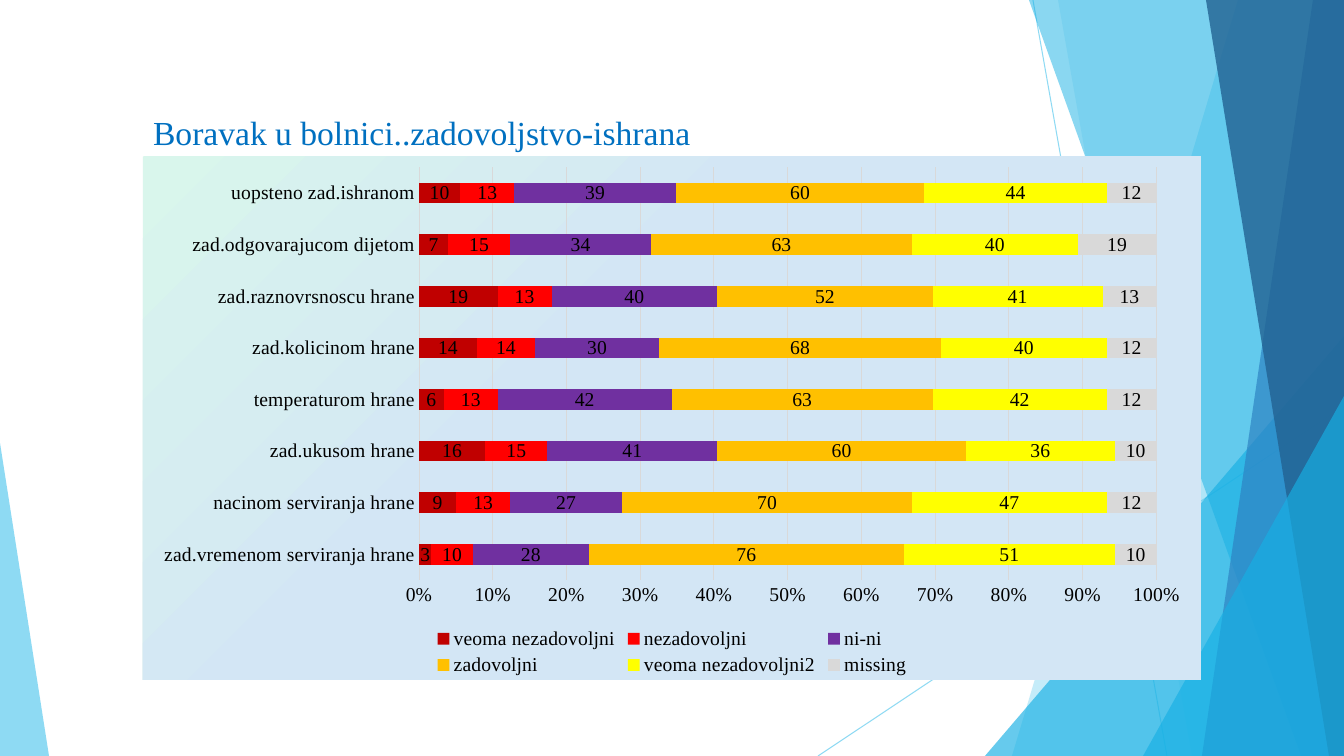
from lxml.etree import SubElement
from pptx import Presentation
from pptx.chart.data import CategoryChartData
from pptx.dml.color import RGBColor
from pptx.enum.chart import XL_CHART_TYPE, XL_LEGEND_POSITION, XL_TICK_MARK
from pptx.enum.shapes import MSO_CONNECTOR, MSO_SHAPE
from pptx.enum.text import MSO_ANCHOR, MSO_AUTO_SIZE, PP_ALIGN
from pptx.oxml import parse_xml
from pptx.oxml.ns import nsdecls, qn
from pptx.util import Pt

SCALE = 914400 / 100.8
WIDTH, HEIGHT = 1344, 756
FONT = "Times New Roman"

CATEGORIES = [
    "zad.vremenom serviranja hrane", "nacinom serviranja hrane",
    "zad.ukusom hrane", "temperaturom hrane", "zad.kolicinom hrane",
    "zad.raznovrsnoscu hrane", "zad.odgovarajucom dijetom",
    "uopsteno zad.ishranom",
]
ANSWERS = [
    ("veoma nezadovoljni", "C00000", (3, 9, 16, 6, 14, 19, 7, 10)),
    ("nezadovoljni", "FF0000", (10, 13, 15, 13, 14, 13, 15, 13)),
    ("ni-ni", "7030A0", (28, 27, 41, 42, 30, 40, 34, 39)),
    ("zadovoljni", "FFC000", (76, 70, 60, 63, 68, 52, 63, 60)),
    ("veoma nezadovoljni2", "FFFF00", (51, 47, 36, 42, 40, 41, 40, 44)),
    ("missing", "D9D9D9", (10, 12, 10, 12, 12, 13, 19, 12)),
]
BACKGROUND_STOPS = [(59, "D3E6F5"), (100, "D9F6EC"), (100, "B7E8F8"), (100, "CFEFFA")]


def px(length):
    return round(length * SCALE)


def color(value):
    return RGBColor.from_string(value)


def set_format(target, values):
    for name, value in values.items():
        setattr(target, name, value)


def set_font(font, size, value):
    set_format(font, {"name": FONT, "size": Pt(size), "bold": False})
    font.color.rgb = color(value)


def paint(fill, value, opacity=100):
    fill.solid()
    fill.fore_color.rgb = color(value)
    if opacity < 100:
        holder = fill._xPr.find(qn("a:solidFill"))[0]
        SubElement(holder, qn("a:alpha"), val=str(opacity * 1000))


def add_ray(page, start, end):
    ray = page.shapes.add_connector(
        MSO_CONNECTOR.STRAIGHT, *(px(value) for value in start + end))
    ray.line.width = Pt(0.75)
    paint(ray.line.fill, "5FCBEF", 70)
    SubElement(ray._element.spPr, qn("a:effectLst"))


def finish_facet(facet, value, opacity):
    facet.shadow.inherit = False
    facet.line.fill.background()
    paint(facet.fill, value, opacity)


def add_band(page, box, top_x, bottom_x, value, opacity):
    left, top, width, height = box
    right, bottom = left + width, top + height
    builder = page.shapes.build_freeform(left + top_x, top, scale=SCALE)
    builder.add_line_segments(
        [(right, top), (right, bottom), (left + bottom_x, bottom)])
    finish_facet(builder.convert_to_shape(), value, opacity)


def add_triangle(page, box, apex, value, opacity):
    triangle = page.shapes.add_shape(
        MSO_SHAPE.ISOSCELES_TRIANGLE, *(px(value) for value in box))
    triangle.adjustments[0] = apex
    finish_facet(triangle, value, opacity)


def add_facets(page, box):
    left, top, width, height = box
    right, bottom = left + width, top + height
    add_ray(page, (left + 215, top), (left + 349, bottom))
    add_ray(page, (right, top + 406), (left, bottom))
    add_band(page, box, 420, 194, "5FCBEF", 36)
    add_band(page, box, 240, 374, "5FCBEF", 20)
    add_triangle(page, (left + 167, top + 336, width - 167, height - 336), 1, "17B0E4", 66)
    add_band(page, box, 211, 483, "17B0E4", 50)
    add_band(page, box, 495, 384, "2E83C3", 70)
    add_band(page, box, 388, 511, "226292", 80)
    add_triangle(page, (left + 325, top + 396, width - 325, height - 396), 1, "17B0E4", 66)


def add_title(page, box):
    title = page.shapes.title
    set_format(title, dict(zip(("left", "top", "width", "height"), map(px, box))))
    frame = title.text_frame
    set_format(frame, {"word_wrap": True, "auto_size": MSO_AUTO_SIZE.NONE,
                       "vertical_anchor": MSO_ANCHOR.BOTTOM})
    para = frame.paragraphs[0]
    para.alignment = PP_ALIGN.LEFT
    span = para.add_run()
    span.text = "Boravak u bolnici..zadovoljstvo-ishrana"
    set_font(span.font, 24, "0070C0")


def fill_chart_background(chart):
    stops = "".join(
        f'<a:gs pos="{position * 1000}"><a:srgbClr val="{value}"/></a:gs>'
        for position, value in BACKGROUND_STOPS)
    background = parse_xml(
        f'<c:spPr {nsdecls("c", "a")}><a:gradFill><a:gsLst>{stops}</a:gsLst>'
        '<a:path path="circle"><a:fillToRect l="100000" t="100000"/></a:path>'
        '</a:gradFill><a:ln><a:noFill/></a:ln></c:spPr>')
    chart.element.find(qn("c:txPr")).addprevious(background)


def style_axes(chart):
    for axis in (chart.category_axis, chart.value_axis):
        set_format(axis, {"major_tick_mark": XL_TICK_MARK.NONE,
                          "minor_tick_mark": XL_TICK_MARK.NONE})
        set_font(axis.tick_labels.font, 14, "000000")
    values = chart.value_axis
    set_format(values, {"has_major_gridlines": True, "major_unit": 0.1,
                        "minimum_scale": 0, "maximum_scale": 1})
    set_format(values.tick_labels, {"number_format": "0%",
                                    "number_format_is_linked": False})
    values.format.line.fill.background()
    for line in (chart.category_axis.format.line, values.major_gridlines.format.line):
        line.width = Pt(0.75)
        line.color.rgb = color("D9D9D9")


def add_answer_chart(page, box):
    data = CategoryChartData()
    data.categories = CATEGORIES
    for name, _, counts in ANSWERS:
        data.add_series(name, counts)
    chart = page.shapes.add_chart(
        XL_CHART_TYPE.BAR_STACKED_100, *map(px, box), data).chart
    set_format(chart, {"has_title": False, "has_legend": True})
    set_font(chart.font, 14, "000000")
    set_format(chart.legend, {"position": XL_LEGEND_POSITION.BOTTOM,
                              "include_in_layout": False})
    set_font(chart.legend.font, 14, "000000")
    fill_chart_background(chart)
    style_axes(chart)
    plot = chart.plots[0]
    set_format(plot, {"gap_width": 150, "overlap": 100, "vary_by_categories": False})
    for series, (_, value, _) in zip(plot.series, ANSWERS):
        paint(series.format.fill, value)
        series.data_labels.show_value = True
        set_font(series.data_labels.font, 14, "000000")


def main():
    deck = Presentation()
    set_format(deck, {"slide_width": px(WIDTH), "slide_height": px(HEIGHT)})
    page = deck.slides.add_slide(deck.slide_layouts[5])
    add_facets(page, (818, 0, WIDTH - 818, HEIGHT))
    add_triangle(page, (0, 443, 49, HEIGHT - 443), 0, "5FCBEF", 70)
    add_title(page, (143, 108, 1058, 49))
    add_answer_chart(page, (143, 157, 1058, 523))
    deck.save("out.pptx")


if __name__ == "__main__":
    main()
